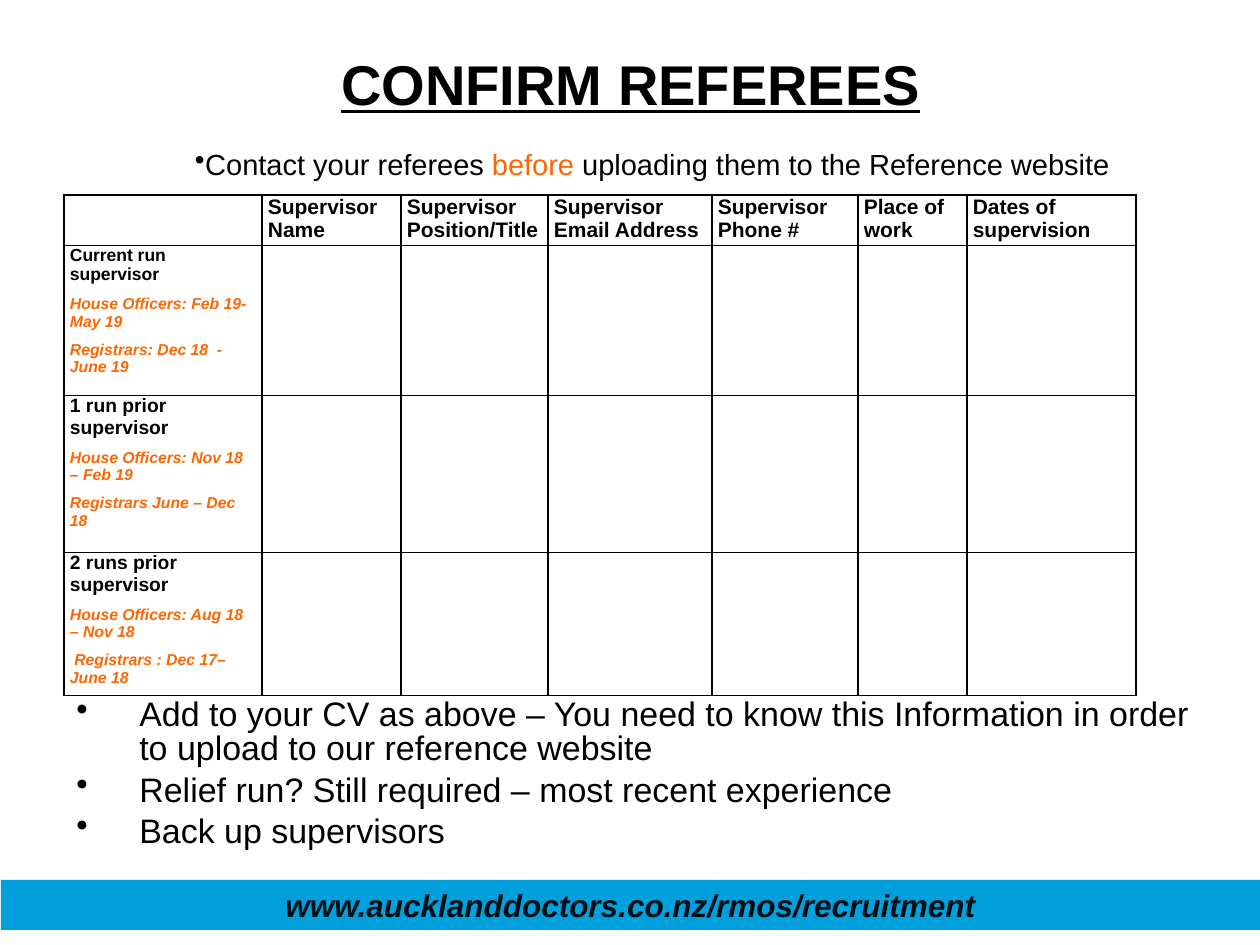
import pptx
import pptx.util
import pptx.dml.color
import pptx.enum.shapes
import pptx.enum.text
import pptx.oxml.ns
from lxml import etree

PX = 914400 // 126
FONT = "Arial"
COLORS = {"text": "000000", "accent": "FF6600", "bar": "00A0DC",
          "bar_text": "001016", "border": "000000"}

TITLE = "CONFIRM REFEREES"
INTRO = [("Contact your referees ", "text"), ("before", "accent"),
         (" uploading them to the Reference website", "text")]
HEADERS = ["", "Supervisor\nName", "Supervisor Position/Title",
           "Supervisor\nEmail Address", "Supervisor\nPhone #",
           "Place of work", "Dates of\nsupervision"]
# Run label, label size in points, periods
RUNS = [
    ("Current run supervisor", 10,
     ["House Officers: Feb 19- May 19", "Registrars: Dec 18  - June 19"]),
    ("1 run prior supervisor", 11,
     ["House Officers: Nov 18 – Feb 19", "Registrars June – Dec 18"]),
    ("2 runs prior supervisor", 11,
     ["House Officers: Aug 18 – Nov 18", " Registrars : Dec 17– June 18"]),
]
ADVICE = [
    "Add to your CV as above – You need to know this Information in order "
    "to upload to our reference website",
    "Relief run? Still required – most recent experience",
    "Back up supervisors",
]
WEBSITE = "www.aucklanddoctors.co.nz/rmos/recruitment"

COLUMN_WIDTHS = [198, 139, 147, 164, 146, 109, 169]
ROW_HEIGHTS = [50, 150, 157, 143]
CENTER = pptx.enum.text.PP_ALIGN.CENTER
MIDDLE = pptx.enum.text.MSO_ANCHOR.MIDDLE


def px(*lengths):
    return [length * PX for length in lengths]


def style(font, size, color="text", bold=False, italic=False):
    font.name = FONT
    font.size = pptx.util.Pt(size)
    font.bold = bold
    font.italic = italic
    font.color.rgb = pptx.dml.color.RGBColor.from_string(COLORS[color])


def add_text_frame(slide, *box):
    text_frame = slide.shapes.add_textbox(*px(*box)).text_frame
    text_frame.word_wrap = True
    return text_frame


def add_bullet(paragraph, indent=0):
    properties = paragraph._p.get_or_add_pPr()
    properties.set("marL", str(indent * PX))
    properties.set("indent", str(-indent * PX))
    paragraph.line_spacing = 0.84
    bullet = etree.SubElement(properties, pptx.oxml.ns.qn("a:buChar"))
    bullet.set("char", "•")


def add_borders(cell):
    """Draw a 1 pt line on all four sides, ahead of the cell's fill."""
    properties = cell._tc.get_or_add_tcPr()
    for position, side in enumerate(("lnL", "lnR", "lnT", "lnB")):
        line = etree.Element(pptx.oxml.ns.qn("a:" + side), w="12700")
        fill = etree.SubElement(line, pptx.oxml.ns.qn("a:solidFill"))
        etree.SubElement(fill, pptx.oxml.ns.qn("a:srgbClr"), val=COLORS["border"])
        properties.insert(position, line)


def add_referee_table(slide):
    frame = slide.shapes.add_table(
        len(ROW_HEIGHTS), len(COLUMN_WIDTHS),
        *px(64, 195, sum(COLUMN_WIDTHS), sum(ROW_HEIGHTS)))
    table = frame.table
    table.first_row = table.horz_banding = False
    for column, width in zip(table.columns, COLUMN_WIDTHS):
        column.width = width * PX
    for row, height in zip(table.rows, ROW_HEIGHTS):
        row.height = height * PX
    for cell in table.iter_cells():
        cell.fill.background()
        cell.margin_left = cell.margin_right = 6 * PX
        cell.margin_top = cell.margin_bottom = 0
        add_borders(cell)
        style(cell.text_frame.paragraphs[0].font, 12)

    for column, header in enumerate(HEADERS):
        text_frame = table.cell(0, column).text_frame
        text_frame.text = header
        for paragraph in text_frame.paragraphs:
            style(paragraph.font, 12, bold=True)

    for row, (label, size, periods) in enumerate(RUNS, start=1):
        text_frame = table.cell(row, 0).text_frame
        text_frame.text = "\n".join([label] + periods)
        heading, *details = text_frame.paragraphs
        style(heading.font, size, bold=True)
        for paragraph in details:
            paragraph.space_before = pptx.util.Pt(6)
            style(paragraph.font, 9, "accent", bold=True, italic=True)


def add_website_bar(slide):
    bar = slide.shapes.add_shape(
        pptx.enum.shapes.MSO_SHAPE.RECTANGLE, *px(1, 880, 1259, 50))
    bar.shadow.inherit = False
    bar.fill.solid()
    bar.fill.fore_color.rgb = pptx.dml.color.RGBColor.from_string(COLORS["bar"])
    bar.line.fill.background()
    bar.text_frame.text = WEBSITE
    bar.text_frame.vertical_anchor = MIDDLE
    paragraph = bar.text_frame.paragraphs[0]
    paragraph.alignment = CENTER
    style(paragraph.font, 18, "bar_text", bold=True, italic=True)


def main():
    presentation = pptx.Presentation()
    presentation.slide_width, presentation.slide_height = px(1260, 945)
    slide = presentation.slides.add_slide(presentation.slide_layouts[6])

    title = add_text_frame(slide, 64, 4, 1134, 158)
    title.vertical_anchor = MIDDLE
    title.text = TITLE
    paragraph = title.paragraphs[0]
    paragraph.alignment = CENTER
    style(paragraph.font, 32, bold=True)
    paragraph.font.underline = True

    intro = add_text_frame(slide, 64, 146, 1176, 44).paragraphs[0]
    add_bullet(intro)
    intro.alignment = CENTER
    for text, color in INTRO:
        run = intro.add_run()
        run.text = text
        style(run.font, 16.6, color)

    add_referee_table(slide)

    advice = add_text_frame(slide, 64, 693, 1176, 160)
    advice.text = "\n".join(ADVICE)
    for index, paragraph in enumerate(advice.paragraphs):
        add_bullet(paragraph, indent=63)
        if index:
            paragraph.space_before = pptx.util.Pt(4)
        style(paragraph.font, 19.4)

    add_website_bar(slide)
    presentation.save("out.pptx")


if __name__ == "__main__":
    main()
